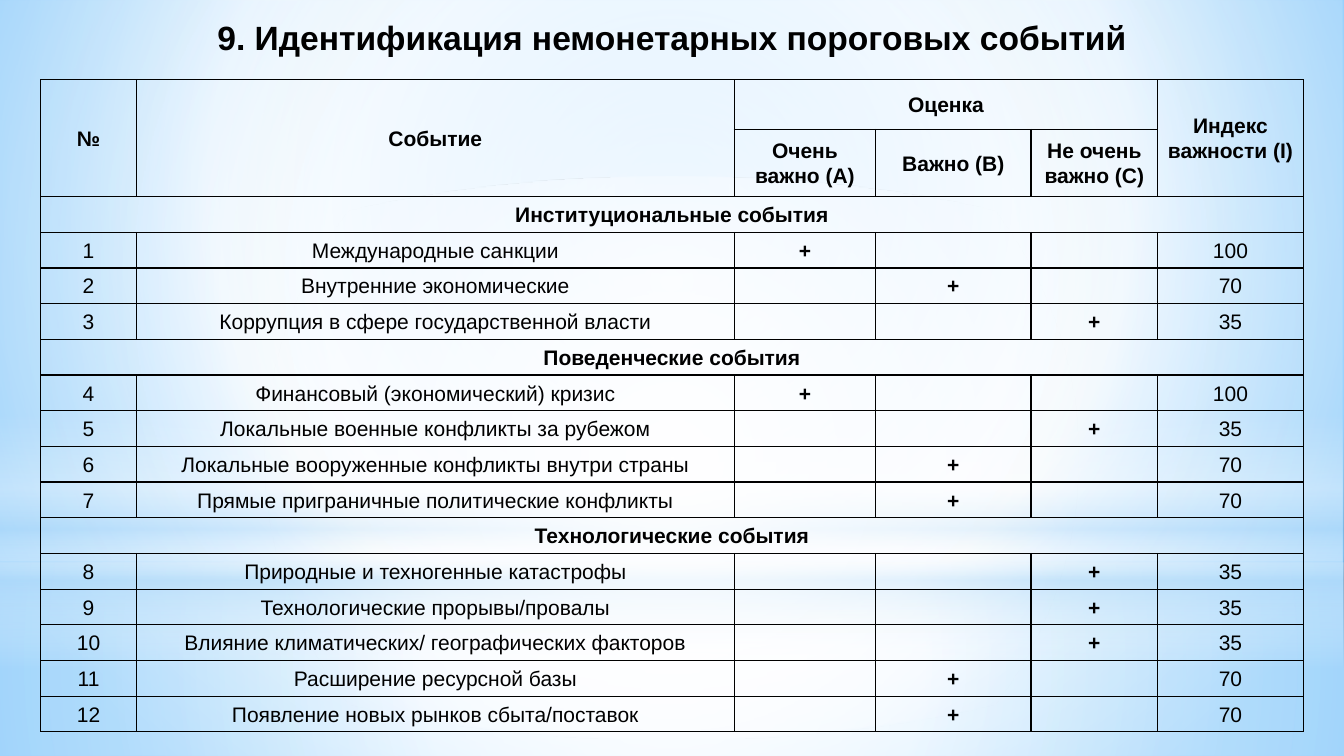
from pptx import Presentation
from pptx.dml.color import RGBColor
from pptx.enum.shapes import MSO_SHAPE
from pptx.enum.text import MSO_ANCHOR, PP_ALIGN
from pptx.oxml import parse_xml
from pptx.oxml.ns import nsdecls, qn
from pptx.util import Pt

PX = 6350  # EMU per px, slide is 1920 x 1080 px
RECT, OVAL = MSO_SHAPE.RECTANGLE, MSO_SHAPE.OVAL
CENTER, MIDDLE = PP_ALIGN.CENTER, MSO_ANCHOR.MIDDLE
MID = (50, 50, 50, 50)

COLS = [137, 854, 202, 222, 181, 208]
HEADER_ROWS, BODY_ROW = [71, 96], 51
# (text, row, column, last row, last column)
HEADERS = [
    ("№", 0, 0, 1, 0),
    ("Событие", 0, 1, 1, 1),
    ("Оценка", 0, 2, 0, 4),
    ("Индекс\nважности (I)", 0, 5, 1, 5),
    ("Очень важно (A)", 1, 2, 1, 2),
    ("Важно (B)", 1, 3, 1, 3),
    ("Не очень важно (C)", 1, 4, 1, 4),
]
# Rating -> (column of the plus, importance index)
RATINGS = {"A": (2, "100"), "B": (3, "70"), "C": (4, "35")}
GROUPS = [
    ("Институциональные события", [
        ("Международные санкции", "A"),
        ("Внутренние экономические", "B"),
        ("Коррупция в сфере государственной власти", "C"),
    ]),
    ("Поведенческие события", [
        ("Финансовый (экономический) кризис", "A"),
        ("Локальные военные конфликты за рубежом", "C"),
        ("Локальные вооруженные конфликты внутри страны", "B"),
        ("Прямые приграничные политические конфликты", "B"),
    ]),
    ("Технологические события", [
        ("Природные и техногенные катастрофы", "C"),
        ("Технологические прорывы/провалы", "C"),
        ("Влияние климатических/ географических факторов", "C"),
        ("Расширение ресурсной базы", "B"),
        ("Появление новых рынков сбыта/поставок", "B"),
    ]),
]


def rgb(value):
    return RGBColor.from_string(value)


class SlideBuilder:
    font, ink = "Arial", "000000"

    def __init__(self, s):
        self.s = s

    def gradient(self, fill, element, stops, focus=None):
        """Stops are (position, colour, opacity); without focus it runs downwards."""
        fill.gradient()
        old = next(element.iter(qn("a:gradFill")))
        gs = "".join(
            f'<a:gs pos="{pos * 1000}"><a:srgbClr val="{rgb(color)}">'
            f'<a:alpha val="{alpha * 1000}"/></a:srgbClr></a:gs>'
            for pos, color, alpha in stops)
        if focus:
            sides = " ".join(f'{k}="{v * 1000}"' for k, v in zip("ltrb", focus))
            way = f'<a:path path="circle"><a:fillToRect {sides}/></a:path>'
        else:
            way = '<a:lin ang="5400000" scaled="0"/>'
        old.getparent().replace(old, parse_xml(
            f'<a:gradFill {nsdecls("a")} rotWithShape="1">'
            f'<a:gsLst>{gs}</a:gsLst>{way}</a:gradFill>'))

    def background(self, stops, focus):
        self.gradient(self.s.background.fill, self.s.element, stops, focus)

    def glow(self, kind, box, stops, focus=None):
        sp = self.s.shapes.add_shape(kind, *(v * PX for v in box))
        sp.shadow.inherit = False
        sp.line.fill.background()
        self.gradient(sp.fill, sp.element, stops, focus)

    def put_text(self, tf, text, size, bold, spacing):
        tf.word_wrap = True
        for i, line in enumerate(text.split("\n")):
            p = tf.add_paragraph() if i else tf.paragraphs[0]
            p.alignment, p.line_spacing = CENTER, spacing
            r = p.add_run()
            r.text = line
            style = {"name": self.font, "size": Pt(size), "bold": bold}
            for key, value in style.items():
                setattr(r.font, key, value)
            r.font.color.rgb = rgb(self.ink)

    def title(self, box, text):
        sp = self.s.shapes.add_textbox(*(v * PX for v in box))
        sp.text_frame.vertical_anchor = MIDDLE
        self.put_text(sp.text_frame, text, 24, True, 0.9)

    def table(self, x, y, cols, rows):
        frame = self.s.shapes.add_table(
            len(rows), len(cols), x * PX, y * PX, sum(cols) * PX, sum(rows) * PX)
        tbl = frame.table
        tbl.first_row = tbl.horz_banding = False
        for col, width in zip(tbl.columns, cols):
            col.width = width * PX
        for row, height in zip(tbl.rows, rows):
            row.height = height * PX
        for cell in tbl.iter_cells():
            self.frame_cell(cell)
        return tbl

    def frame_cell(self, cell):
        layout = {"margin_left": 7 * PX, "margin_right": 7 * PX,
                  "margin_top": 0, "margin_bottom": 0, "vertical_anchor": MIDDLE}
        for key, value in layout.items():
            setattr(cell, key, value)
        cell.fill.background()
        tcPr = cell._tc.get_or_add_tcPr()
        for i, side in enumerate("LRTB"):
            tcPr.insert(i, parse_xml(
                f'<a:ln{side} {nsdecls("a")} w="{Pt(1)}"><a:solidFill>'
                f'<a:srgbClr val="{rgb(self.ink)}"/></a:solidFill></a:ln{side}>'))

    def cell(self, tbl, row, col, text, bold=False, last=None):
        cell = tbl.cell(row, col)
        if last and last != (row, col):
            cell.merge(tbl.cell(*last))
        self.put_text(cell.text_frame, text, 15, bold, 1.07)


def main():
    prs = Presentation()
    prs.slide_width, prs.slide_height = 1920 * PX, 1080 * PX
    b = SlideBuilder(prs.slides.add_slide(prs.slide_layouts[6]))

    # Backdrop
    b.background([(0, "9ED5FF", 100), (60, "FFFFFF", 100), (100, "5BB9FF", 100)],
                 (20, 10, 20, 60))
    b.glow(RECT, (0, 804, 1920, 276),
           [(0, "FFFFFF", 91), (37, "FFFFFF", 76), (100, "B4DCFA", 79)], MID)
    b.glow(RECT, (0, 0, 1920, 804),
           [(0, "FFFFFF", 89), (48, "FFFFFF", 62), (100, "B4DCFA", 79)], MID)
    b.glow(RECT, (0, 593, 1920, 360),
           [(0, "FFFFFF", 0), (29, "FFFFFF", 30), (45, "B4DCFA", 40),
            (55, "FFFFFF", 26), (65, "B4DCFA", 60), (100, "FFFFFF", 0)])
    b.glow(OVAL, (0, 252, 1920, 804), [(0, "FFFFFF", 100), (56, "FFFFFF", 0)], MID)

    # Title
    b.title((37, 0, 1846, 114), "9. Идентификация немонетарных пороговых событий")

    # Table header
    body_count = sum(1 + len(events) for _, events in GROUPS)
    tbl = b.table(58, 114, COLS, HEADER_ROWS + [BODY_ROW] * body_count)
    for text, row, col, last_row, last_col in HEADERS:
        b.cell(tbl, row, col, text, True, (last_row, last_col))

    # Event groups
    row, number = len(HEADER_ROWS), 0
    for group, events in GROUPS:
        b.cell(tbl, row, 0, group, True, (row, len(COLS) - 1))
        row += 1
        for event, rating in events:
            number += 1
            plus_col, index = RATINGS[rating]
            b.cell(tbl, row, 0, str(number))
            b.cell(tbl, row, 1, event)
            b.cell(tbl, row, plus_col, "+", True)
            b.cell(tbl, row, 5, index)
            row += 1

    prs.save("out.pptx")


if __name__ == "__main__":
    main()
